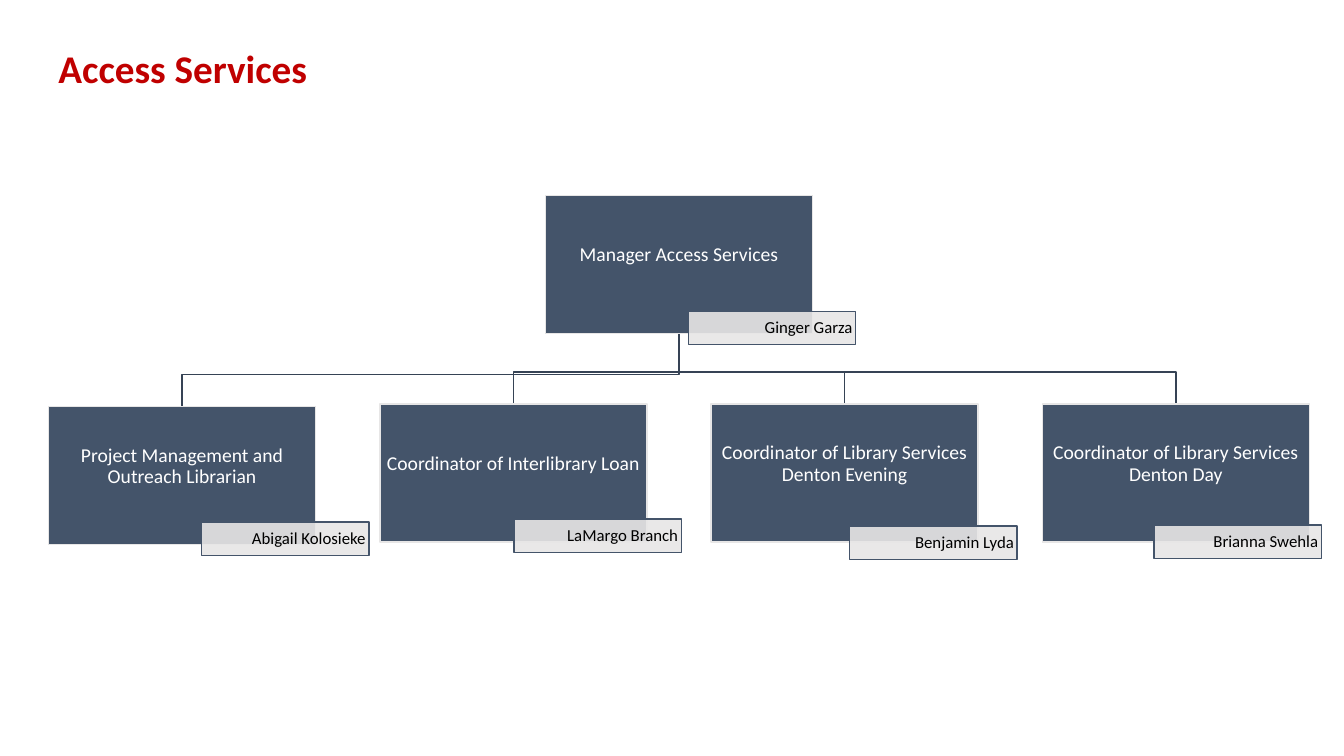
from dataclasses import dataclass

import pptx
import pptx.dml.color
import pptx.enum.shapes
import pptx.enum.text
import pptx.oxml
import pptx.oxml.ns
import pptx.shapes.autoshape
import pptx.slide
import pptx.text.text
import pptx.util

Pt = pptx.util.Pt
ALIGN = pptx.enum.text.PP_ALIGN
ANCHOR = pptx.enum.text.MSO_ANCHOR

FONT = "Calibri"
SLATE, PALE, LINE = "44546A", "E7E6E6", "364355"
WHITE, BLACK, RED = "FFFFFF", "000000", "C00000"

BOX_W, BOX_H = 190.8, 98.6
TAG_W, TAG_H = 119.5, 23.8
ROW_LEFT, ROW_PITCH = 34.7, 236.6
ROW_TOP = 288.7
ELBOW_RISE = 23


@dataclass
class Position:
    role: list[str]
    holder: str
    left: float
    top: float
    tag_left: float
    tag_top: float

    @property
    def center(self) -> float:
        return self.left + BOX_W / 2


MANAGER = Position(["Manager Access Services"], "Ginger Garza",
                   389.6, 139.7, 491.8, 222.5)
REPORTS = [
    Position(role, holder, ROW_LEFT + i * ROW_PITCH, top, tag_left, tag_top)
    for i, (role, holder, top, tag_left, tag_top) in enumerate([
        (["Project Management and Outreach Librarian"], "Abigail Kolosieke",
         ROW_TOP + 1.7, 144, 373),
        (["Coordinator of Interlibrary Loan"], "LaMargo Branch",
         ROW_TOP, 367.2, 370.8),
        (["Coordinator of Library Services", "Denton Evening"], "Benjamin Lyda",
         ROW_TOP, 607, 375.8),
        (["Coordinator of Library Services", "Denton Day"], "Brianna Swehla",
         ROW_TOP, 824.4, 375.1),
    ])
]


def rgb(value: str) -> pptx.dml.color.RGBColor:
    return pptx.dml.color.RGBColor.from_string(value)


def add_text(p: pptx.text.text._Paragraph, lines: list[str], size: float,
             color: str, bold: bool = False) -> None:
    for i, line in enumerate(lines):
        if i:
            p.add_line_break()
        r = p.add_run()
        r.text = line
        r.font.name = FONT
        r.font.size = Pt(size)
        r.font.bold = bold
        r.font.color.rgb = rgb(color)


def add_panel(s: pptx.slide.Slide, left: float, top: float, width: float,
              height: float, fill: str, line: str, lines: list[str],
              size: float, color: str, align: ALIGN, side: float,
              bottom: float) -> pptx.shapes.autoshape.Shape:
    """Add an outlined rectangle with text; side and bottom are insets."""
    sp = s.shapes.add_shape(pptx.enum.shapes.MSO_SHAPE.RECTANGLE,
                            Pt(left), Pt(top), Pt(width), Pt(height))
    sp.shadow.inherit = False
    sp.fill.solid()
    sp.fill.fore_color.rgb = rgb(fill)
    sp.line.color.rgb = rgb(line)
    sp.line.width = Pt(1)
    tf = sp.text_frame
    tf.word_wrap = True
    tf.vertical_anchor = ANCHOR.MIDDLE
    tf.margin_left = tf.margin_right = Pt(side)
    tf.margin_top, tf.margin_bottom = Pt(0.7), Pt(bottom)
    p = tf.paragraphs[0]
    p.alignment = align
    p.line_spacing = 0.9
    p.space_after = Pt(0.35 * size)
    add_text(p, lines, size, color)
    return sp


def set_opacity(sp: pptx.shapes.autoshape.Shape, percent: int) -> None:
    clr = sp.fill._xPr.find(".//" + pptx.oxml.ns.qn("a:srgbClr"))
    clr.append(pptx.oxml.parse_xml(
        f'<a:alpha {pptx.oxml.ns.nsdecls("a")} val="{percent * 1000}"/>'))


def add_position(s: pptx.slide.Slide, pos: Position) -> None:
    """Add the role box and the name tag overlapping it."""
    add_panel(s, pos.left, pos.top, BOX_W, BOX_H, SLATE, PALE, pos.role,
              14, WHITE, ALIGN.CENTER, 0.7, 13.7)
    tag = add_panel(s, pos.tag_left, pos.tag_top, TAG_W, TAG_H, PALE, SLATE,
                    [pos.holder], 12, BLACK, ALIGN.RIGHT, 2.2, 0.7)
    set_opacity(tag, 90)


def add_elbow(s: pptx.slide.Slide, boss: Position, report: Position) -> None:
    bend = report.top - ELBOW_RISE
    fb = s.shapes.build_freeform(Pt(boss.center), Pt(boss.top + BOX_H))
    fb.add_line_segments([(Pt(boss.center), Pt(bend)),
                          (Pt(report.center), Pt(bend)),
                          (Pt(report.center), Pt(report.top))], close=False)
    sp = fb.convert_to_shape()
    sp.shadow.inherit = False
    sp.fill.background()
    sp.line.color.rgb = rgb(LINE)
    sp.line.width = Pt(1)


def add_title(s: pptx.slide.Slide, text: str) -> None:
    sp = s.shapes.add_textbox(Pt(34.7), Pt(28.1), Pt(255.6), Pt(41))
    tf = sp.text_frame
    tf.word_wrap = True
    add_text(tf.paragraphs[0], [text], 28, RED, bold=True)


def main() -> None:
    prs = pptx.Presentation()
    prs.slide_width, prs.slide_height = Pt(960), Pt(540)
    s = prs.slides.add_slide(prs.slide_layouts[6])
    add_title(s, "Access Services")
    for report in reversed(REPORTS):
        add_elbow(s, MANAGER, report)
    for pos in [MANAGER, *REPORTS]:
        add_position(s, pos)
    prs.save("out.pptx")


if __name__ == "__main__":
    main()
